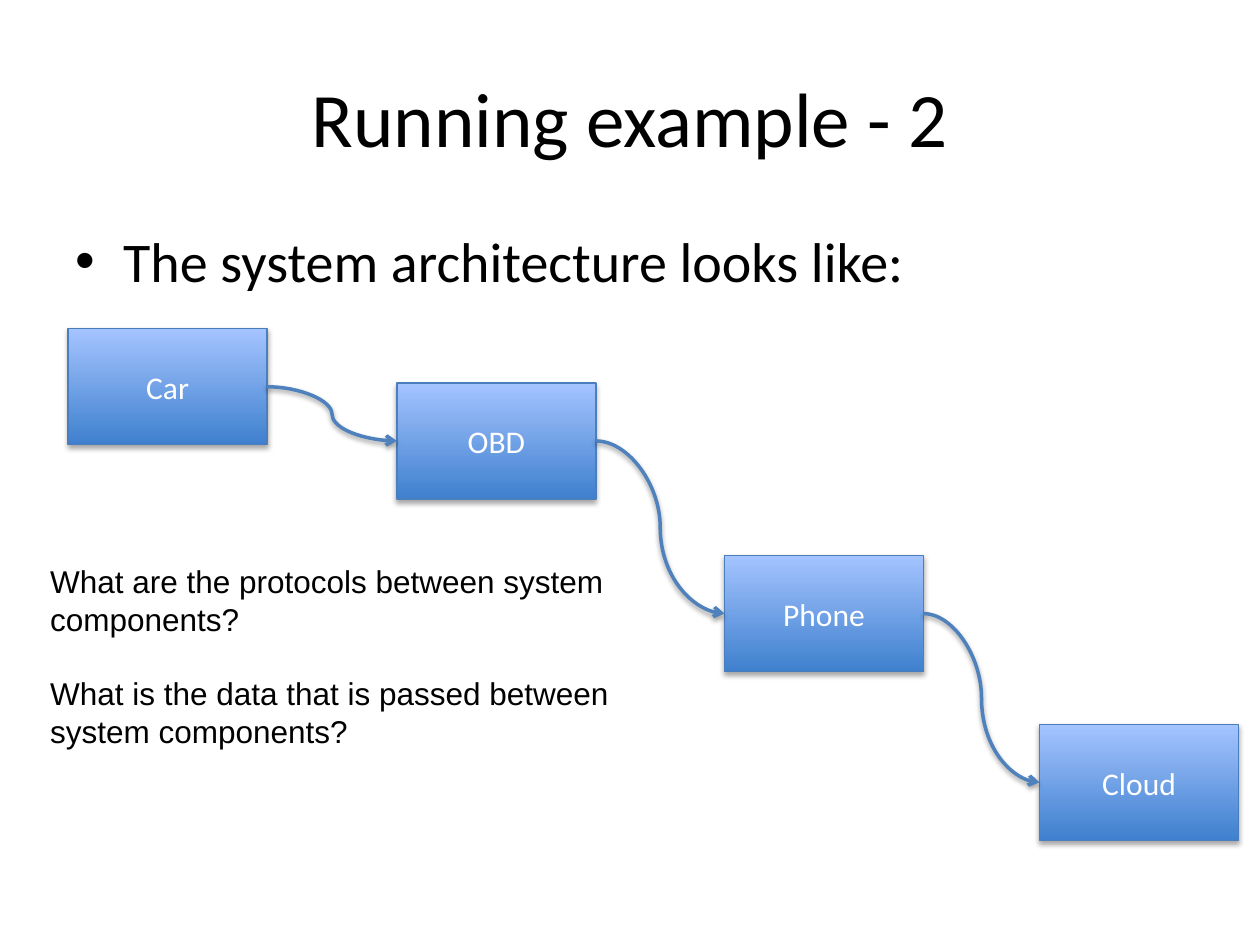
from pptx import Presentation
from pptx.dml.color import RGBColor
from pptx.enum.shapes import MSO_CONNECTOR as Connector, MSO_SHAPE as Shape
from pptx.enum.text import MSO_ANCHOR as Anchor, PP_ALIGN as Align
from pptx.oxml.ns import qn
from pptx.util import Inches, Pt
from lxml.etree import SubElement

BOX_SIZE = (1.58, 0.92)
RIGHT_SITE, LEFT_SITE = 3, 1
COMPONENTS = [("Car", 0.54, 2.61), ("OBD", 3.15, 3.04),
              ("Phone", 5.75, 4.41), ("Cloud", 8.25, 5.75)]
QUESTIONS = [
    ("What are the protocols between system", "components?"),
    ("What is the data that is passed between", "system components?"),
]


def color(hex_text):
    return RGBColor.from_string(hex_text)


def set_attributes(target, values):
    for name, value in values.items():
        setattr(target, name, value)


def set_font(paragraph, size, name="Calibri", hex_text="000000"):
    set_attributes(paragraph.font, {"size": Pt(size), "name": name})
    paragraph.font.color.rgb = color(hex_text)


def add_shadow(effects, opacity, distance):
    shadow = SubElement(effects, qn("a:outerShdw"), blurRad=str(Pt(3.1)),
                        dist=str(Pt(distance)), dir="5400000", rotWithShape="0")
    black = SubElement(shadow, qn("a:srgbClr"), val="000000")
    SubElement(black, qn("a:alpha"), val=str(opacity * 1000))


def add_text_box(slide, bounds, wrap=True, anchor=Anchor.TOP):
    frame = slide.shapes.add_textbox(*map(Inches, bounds)).text_frame
    set_attributes(frame, {"word_wrap": wrap, "vertical_anchor": anchor})
    return frame


def add_title(slide, text):
    frame = add_text_box(slide, (0.5, 0.3, 9, 1.25), anchor=Anchor.MIDDLE)
    paragraph = frame.paragraphs[0]
    set_attributes(paragraph, {"text": text, "alignment": Align.CENTER})
    set_font(paragraph, 44)


def add_bullet(slide, text):
    paragraph = add_text_box(slide, (0.5, 1.75, 9, 1)).paragraphs[0]
    paragraph.text = text
    properties = paragraph._p.get_or_add_pPr()
    properties.set("marL", str(Inches(0.38)))
    properties.set("indent", str(Inches(-0.38)))
    SubElement(properties, qn("a:buFont"), typeface="Arial")
    SubElement(properties, qn("a:buChar"), char="•")
    set_font(paragraph, 32)


def add_component(slide, text, left, top):
    shape = slide.shapes.add_shape(
        Shape.RECTANGLE, *map(Inches, (left, top, *BOX_SIZE)))
    shape.fill.gradient()
    shape.fill.gradient_angle = 90
    for stop, position, hex_text in zip(
            shape.fill.gradient_stops, (0, 1), ("3F80CE", "A4C4FF")):
        stop.position = position
        stop.color.rgb = color(hex_text)
    shape.line.color.rgb = color("4B7EBC")
    shape.line.width = Pt(0.75)
    shape.shadow.inherit = False
    add_shadow(shape._element.spPr.find(qn("a:effectLst")), 35, 1.8)
    shape.text_frame.vertical_anchor = Anchor.MIDDLE
    paragraph = shape.text_frame.paragraphs[0]
    set_attributes(paragraph, {"text": text, "alignment": Align.CENTER})
    set_font(paragraph, 18, hex_text="FFFFFF")
    return shape


def connect(slide, source, target):
    connector = slide.shapes.add_connector(Connector.CURVE, 0, 0, 0, 0)
    connector.begin_connect(source, RIGHT_SITE)
    connector.end_connect(target, LEFT_SITE)
    connector.line.color.rgb = color("4F81BD")
    connector.line.width = Pt(2)
    SubElement(connector.line._get_or_add_ln(), qn("a:tailEnd"), type="arrow")
    add_shadow(SubElement(connector._element.spPr, qn("a:effectLst")), 38, 1.6)


def add_questions(slide, questions):
    frame = add_text_box(slide, (0.3, 4.41, 4.68, 1.62), wrap=False)
    paragraph = None
    for question in questions:
        for index, line in enumerate(question):
            is_first = paragraph is None
            paragraph = frame.paragraphs[0] if is_first else frame.add_paragraph()
            paragraph.text = line
            # One line of space between the questions
            if index == 0 and not is_first:
                paragraph.space_before = Pt(21)
            set_font(paragraph, 18, "Arial")


def main():
    presentation = Presentation()
    set_attributes(presentation, {"slide_width": Inches(10),
                                  "slide_height": Inches(7.5)})
    slide = presentation.slides.add_slide(presentation.slide_layouts[6])

    # Heading
    add_title(slide, "Running example - 2")
    add_bullet(slide, "The system architecture looks like:")

    # Architecture chain
    boxes = [add_component(slide, *component) for component in COMPONENTS]
    for source, target in zip(boxes, boxes[1:]):
        connect(slide, source, target)

    # Open questions
    add_questions(slide, QUESTIONS)
    presentation.save("out.pptx")


if __name__ == "__main__":
    main()
